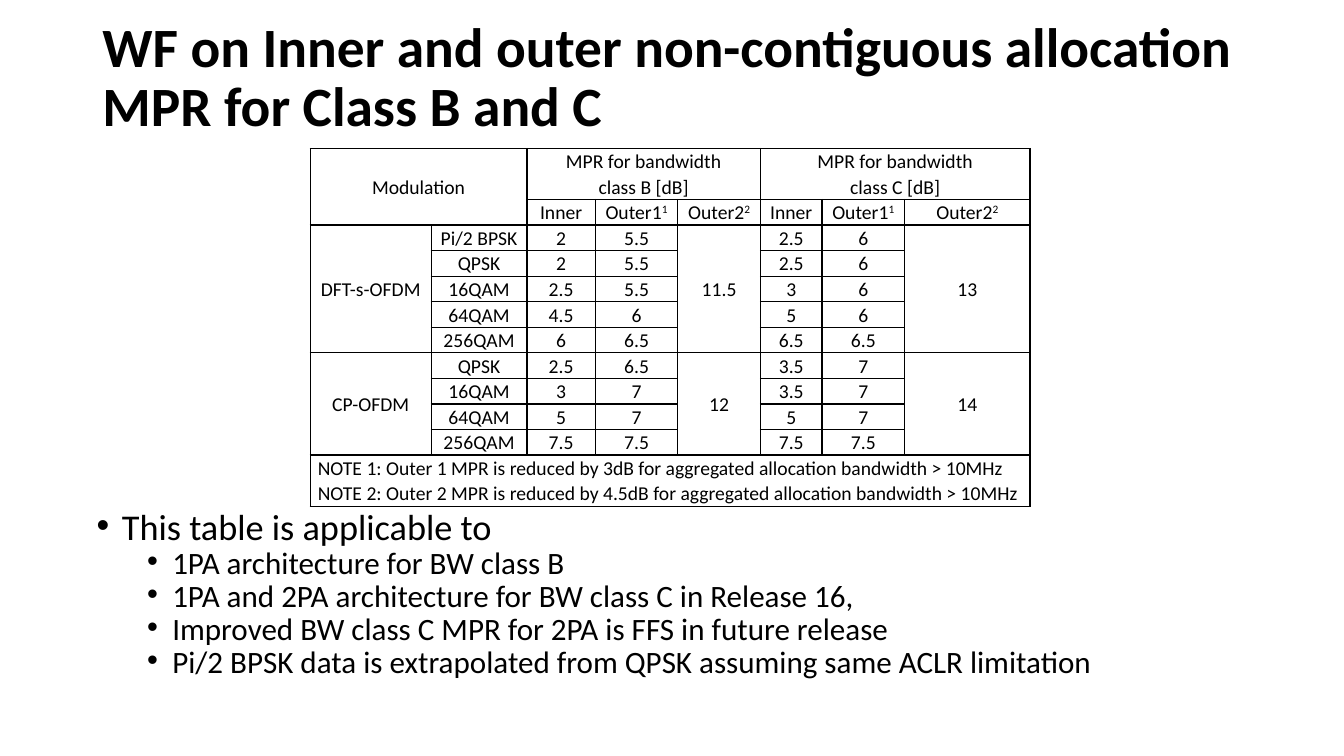
"""Build the slide on MPR for non-contiguous allocation in Class B and C."""
from lxml.etree import SubElement
from pptx import Presentation
from pptx.dml.color import RGBColor
from pptx.enum.text import MSO_ANCHOR, MSO_AUTO_SIZE, PP_ALIGN
from pptx.oxml.ns import qn
from pptx.util import Pt

TITLE = "WF on Inner and outer non-contiguous allocation MPR for Class B and C"
HEADS = ["Inner", "Outer1^1", "Outer2^2"]
ROWS = [
    ["Modulation", "", "MPR for bandwidth\nclass B [dB]", "", "",
     "MPR for bandwidth\nclass C [dB]", "", ""],
    ["", "", *HEADS, *HEADS],
    ["DFT-s-OFDM", "Pi/2 BPSK", "2", "5.5", "11.5", "2.5", "6", "13"],
    ["", "QPSK", "2", "5.5", "", "2.5", "6", ""],
    ["", "16QAM", "2.5", "5.5", "", "3", "6", ""],
    ["", "64QAM", "4.5", "6", "", "5", "6", ""],
    ["", "256QAM", "6", "6.5", "", "6.5", "6.5", ""],
    ["CP-OFDM", "QPSK", "2.5", "6.5", "12", "3.5", "7", "14"],
    ["", "16QAM", "3", "7", "", "3.5", "7", ""],
    ["", "64QAM", "5", "7", "", "5", "7", ""],
    ["", "256QAM", "7.5", "7.5", "", "7.5", "7.5", ""],
    ["NOTE 1: Outer 1 MPR is reduced by 3dB for aggregated allocation bandwidth > 10MHz\n"
     "NOTE 2: Outer 2 MPR is reduced by 4.5dB for aggregated allocation bandwidth > 10MHz",
     "", "", "", "", "", "", ""],
]
WIDTHS = [86.4, 68.4, 48.8, 59, 59, 44, 59, 89.6]
LINE = 18.25
MERGES = [(0, 0, 1, 1), (0, 2, 0, 4), (0, 5, 0, 7), (11, 0, 11, 7)]
MERGES += [(top, col, end, col) for top, end in ((2, 6), (7, 10)) for col in (0, 4, 7)]
POINTS = [
    (0, "This table is applicable to"),
    (1, "1PA architecture for BW class B"),
    (1, "1PA and 2PA architecture for BW class C in Release 16,"),
    (1, "Improved BW class C MPR for 2PA is FFS in future release"),
    (1, "Pi/2 BPSK data is extrapolated from QPSK assuming same ACLR limitation"),
]
LEVELS = [{"size": 25.9, "left": 18, "gap": 0}, {"size": 22.2, "left": 54, "gap": 5}]
FRAME = {"word_wrap": True, "auto_size": MSO_AUTO_SIZE.NONE}
INSETS = {"margin_left": Pt(5.4), "margin_right": Pt(5.4), "margin_top": 0,
          "margin_bottom": 0, "vertical_anchor": MSO_ANCHOR.MIDDLE}


def put(item, values):
    for name, value in values.items():
        setattr(item, name, value)


def color(code):
    return RGBColor.from_string(code)


def style(font, size, bold=False):
    put(font, {"name": "Calibri", "size": Pt(size), "bold": bold})
    font.color.rgb = color("000000")


def border(cell):
    props = cell._tc.get_or_add_tcPr()
    for side in ("lnL", "lnR", "lnT", "lnB"):
        line = SubElement(props, qn(f"a:{side}"), w=str(Pt(1)))
        fill = SubElement(line, qn("a:solidFill"))
        SubElement(fill, qn("a:srgbClr"), val="000000")


def write(cell, text, align):
    frame = cell.text_frame
    for i, line in enumerate(text.split("\n")):
        para = frame.add_paragraph() if i else frame.paragraphs[0]
        put(para, {"alignment": align, "line_spacing": 1.07})
        style(para.font, 14)
        for j, part in enumerate(line.split("^")):
            run = para.add_run()
            run.text = part
            style(run.font, 14)
            if j:
                run._r.get_or_add_rPr().set("baseline", "30000")


def add_title(slide):
    title = slide.shapes.title
    put(title, {"left": Pt(66), "top": Pt(28.8), "width": Pt(828), "height": Pt(55.4)})
    frame = title.text_frame
    put(frame, {**FRAME, "vertical_anchor": MSO_ANCHOR.MIDDLE, "text": TITLE})
    para = frame.paragraphs[0]
    put(para, {"alignment": PP_ALIGN.LEFT, "line_spacing": 0.9})
    style(para.font, 39.6, True)


def add_grid(slide):
    lines = [max(text.count("\n") for text in row) + 1 for row in ROWS]
    table = slide.shapes.add_table(
        len(ROWS), len(WIDTHS), Pt(221.6), Pt(106),
        Pt(sum(WIDTHS)), Pt(sum(lines) * LINE)).table
    put(table, {"first_row": False, "horz_banding": False})
    for col, width in zip(table.columns, WIDTHS):
        col.width = Pt(width)
    for r, row in enumerate(ROWS):
        table.rows[r].height = Pt(lines[r] * LINE)
        align = PP_ALIGN.LEFT if r == len(ROWS) - 1 else PP_ALIGN.CENTER
        for c, text in enumerate(row):
            cell = table.cell(r, c)
            put(cell, INSETS)
            border(cell)
            cell.fill.background()
            write(cell, text, align)
    for top, left, end, right in MERGES:
        table.cell(top, left).merge(table.cell(end, right))


def add_points(slide):
    frame = slide.shapes.add_textbox(Pt(62), Pt(365), Pt(828), Pt(131.8)).text_frame
    put(frame, FRAME)
    for i, (level, text) in enumerate(POINTS):
        look = LEVELS[level]
        para = frame.add_paragraph() if i else frame.paragraphs[0]
        props = para._p.get_or_add_pPr()
        props.set("marL", str(Pt(look["left"])))
        props.set("indent", str(Pt(-18)))
        SubElement(props, qn("a:buFont"), typeface="Arial")
        SubElement(props, qn("a:buChar"), char="•")
        put(para, {"level": level, "line_spacing": 0.7, "space_before": Pt(look["gap"])})
        run = para.add_run()
        run.text = text
        style(run.font, look["size"])


def main():
    deck = Presentation()
    put(deck, {"slide_width": Pt(960), "slide_height": Pt(540)})
    slide = deck.slides.add_slide(deck.slide_layouts[5])
    add_title(slide)
    add_grid(slide)
    add_points(slide)
    deck.save("out.pptx")


if __name__ == "__main__":
    main()
